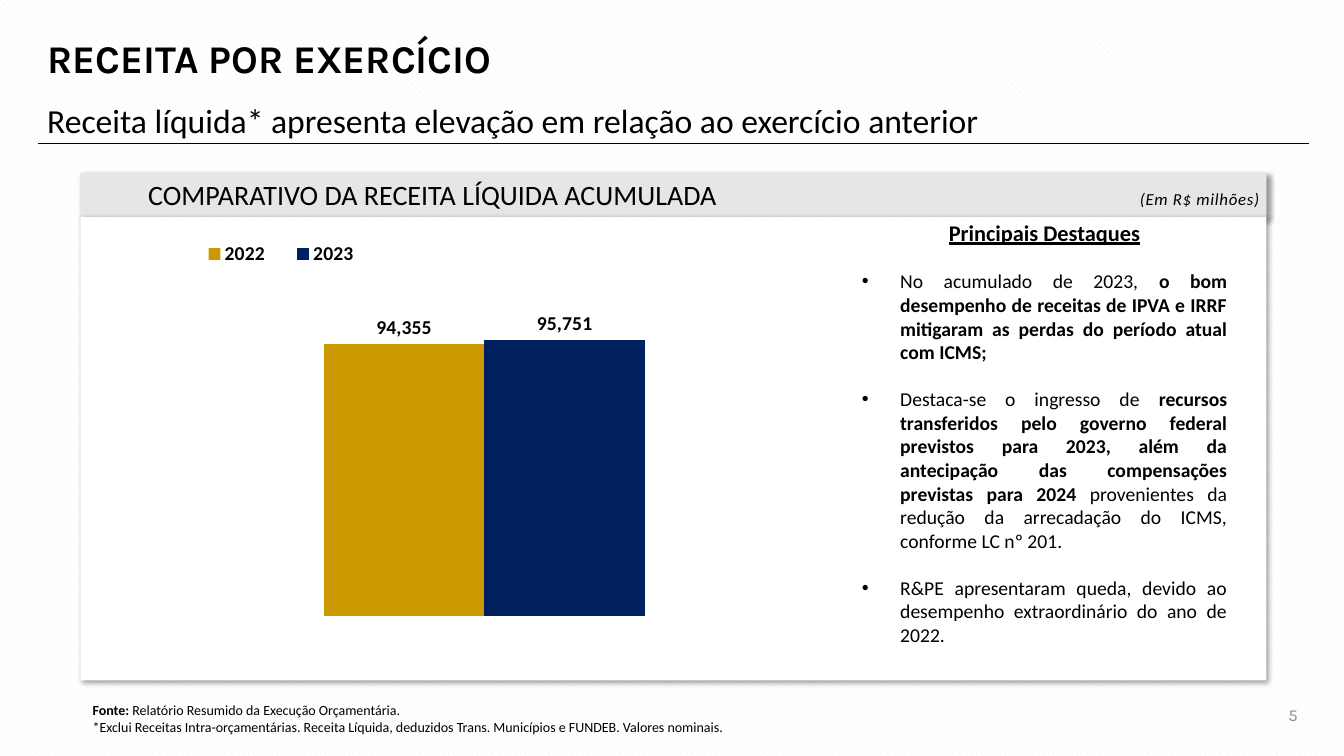
import pptx
import pptx.chart.data
import pptx.dml.color
import pptx.enum.chart
import pptx.enum.dml
import pptx.enum.shapes
import pptx.enum.text
import pptx.oxml
import pptx.oxml.ns
import pptx.util
from lxml import etree

Inches = pptx.util.Inches
Pt = pptx.util.Pt
ALIGN = pptx.enum.text.PP_ALIGN
ANCHOR = pptx.enum.text.MSO_ANCHOR
qn = pptx.oxml.ns.qn

COLORS = {
    "black": "000000",
    "white": "FFFFFF",
    "hatch": "F2F2F2",
    "header": "E7E6E6",
    "page": "8C8C8C",
    "2022": "CC9900",
    "2023": "002060",
}
REVENUE = {"2022": 94355, "2023": 95751}
HIGHLIGHTS = [
    [("No acumulado de 2023, ", False),
     ("o bom desempenho de receitas de IPVA e IRRF mitigaram as perdas "
      "do período atual com ICMS;", True)],
    [("Destaca-se o ingresso de ", False),
     ("recursos transferidos pelo governo federal previstos para 2023, além da "
      "antecipação das compensações previstas para 2024 ", True),
     ("provenientes da redução da arrecadação do ICMS, conforme LC nº 201.", False)],
    [("R&PE apresentaram queda, devido ao desempenho extraordinário "
      "do ano de 2022.", False)],
]


def rgb(name):
    return pptx.dml.color.RGBColor.from_string(COLORS[name])


def set_font(font, size, name="Calibri", color="black", bold=False):
    font.name = name
    font.size = Pt(size)
    font.bold = bold
    font.color.rgb = rgb(color)


def add_run(p, text, size, **style):
    r = p.add_run()
    r.text = text
    set_font(r.font, size, **style)
    return r


def add_text_box(s, left, top, width, height, anchor=ANCHOR.TOP):
    tf = s.shapes.add_textbox(Inches(left), Inches(top), Inches(width), Inches(height)).text_frame
    tf.word_wrap = True
    tf.vertical_anchor = anchor
    return tf


def add_panel(s, top, height, color):
    """Add a borderless rectangle with a soft shadow to the lower right."""
    sp = s.shapes.add_shape(pptx.enum.shapes.MSO_SHAPE.RECTANGLE,
                            Inches(0.8), Inches(top), Inches(11.76), Inches(height))
    sp.fill.solid()
    sp.fill.fore_color.rgb = rgb(color)
    sp.line.fill.background()
    sp.shadow.inherit = False
    effects = sp._element.spPr.find(qn("a:effectLst"))
    shadow = etree.SubElement(effects, qn("a:outerShdw"), blurRad=str(Pt(4)), dist=str(Pt(3)),
                              dir=str(45 * 60000), algn="tl", rotWithShape="0")
    tint = etree.SubElement(shadow, qn("a:srgbClr"), val=COLORS["black"])
    etree.SubElement(tint, qn("a:alpha"), val="40000")
    return sp


def add_rule(s, left, right, y):
    line = s.shapes.add_connector(pptx.enum.shapes.MSO_CONNECTOR.STRAIGHT,
                                  Inches(left), Inches(y), Inches(right), Inches(y))
    line.line.color.rgb = rgb("black")
    line.line.width = Pt(0.5)
    etree.SubElement(line._element.spPr, qn("a:effectLst"))


def place(parent, index, x, y, w, h, inner=False):
    """Give a chart part a manual layout, in fractions of the chart area."""
    for old in parent.findall(qn("c:layout")):
        parent.remove(old)
    layout = etree.Element(qn("c:layout"))
    manual = etree.SubElement(layout, qn("c:manualLayout"))
    values = {"xMode": "edge", "yMode": "edge", "x": x, "y": y, "w": w, "h": h}
    if inner:
        values = {"layoutTarget": "inner", **values}
    for tag, value in values.items():
        etree.SubElement(manual, qn("c:" + tag), val=str(value))
    parent.insert(index, layout)


def add_revenue_chart(s):
    data = pptx.chart.data.CategoryChartData(number_format="#,##0")
    data.categories = ["1"]
    for year, value in REVENUE.items():
        data.add_series(year, [value])
    chart = s.shapes.add_chart(pptx.enum.chart.XL_CHART_TYPE.COLUMN_CLUSTERED,
                               Inches(1.33), Inches(2.2), Inches(6.95), Inches(3.99), data).chart
    set_font(chart.font, 14, bold=True)
    chart.has_title = False

    chart.has_legend = True
    chart.legend.position = pptx.enum.chart.XL_LEGEND_POSITION.TOP
    chart.legend.include_in_layout = False
    set_font(chart.legend.font, 14, bold=True)
    place(chart.legend._element, 1, 0.07, 0.03, 0.28, 0.1)
    place(chart._chartSpace.chart.plotArea, 0, 0.02, 0.12, 0.96, 0.86, inner=True)

    chart.category_axis.visible = False
    axis = chart.value_axis
    axis.minimum_scale = 0
    axis.maximum_scale = 120000
    axis.has_major_gridlines = False
    axis.major_tick_mark = pptx.enum.chart.XL_TICK_MARK.NONE
    axis.tick_label_position = pptx.enum.chart.XL_TICK_LABEL_POSITION.NONE
    axis.format.line.fill.background()

    plot = chart.plots[0]
    plot.vary_by_categories = False
    plot.gap_width = 219
    plot.overlap = 0
    for series in plot.series:
        series.format.fill.solid()
        series.format.fill.fore_color.rgb = rgb(series.name)
        labels = series.data_labels
        labels.show_value = True
        labels.number_format = "#,##0"
        labels.number_format_is_linked = False
        labels.position = pptx.enum.chart.XL_LABEL_POSITION.OUTSIDE_END
        set_font(labels.font, 14, bold=True)


def add_highlights(s):
    tf = add_text_box(s, 8.45, 2.12, 3.82, 4.38)
    p = tf.paragraphs[0]
    p.alignment = ALIGN.CENTER
    add_run(p, "Principais Destaques", 16, bold=True).font.underline = True
    for runs in HIGHLIGHTS:
        p = tf.add_paragraph()
        pPr = p._p.get_or_add_pPr()
        pPr.set("marL", str(Inches(0.38)))
        pPr.set("indent", str(Inches(-0.38)))
        etree.SubElement(pPr, qn("a:buFont"), typeface="Arial")
        etree.SubElement(pPr, qn("a:buChar"), char="•")
        p.alignment = ALIGN.JUSTIFY
        p.space_before = Pt(17)
        for text, bold in runs:
            add_run(p, text, 14, bold=bold)


def add_headings(s):
    p = add_text_box(s, 0.37, 0.21, 8.89, 0.79, ANCHOR.MIDDLE).paragraphs[0]
    p.line_spacing = 0.9
    add_run(p, "RECEITA POR EXERCÍCIO", 28, name="Karla", bold=True)
    p = add_text_box(s, 0.37, 0.86, 12.6, 0.59, ANCHOR.MIDDLE).paragraphs[0]
    p.line_spacing = 1.2
    add_run(p, "Receita líquida* apresenta elevação em relação ao exercício anterior", 24)
    add_rule(s, 0.38, 12.98, 1.42)


def add_card(s):
    tf = add_panel(s, 1.71, 0.44, "header").text_frame
    tf.margin_left = Inches(0.67)
    tf.vertical_anchor = ANCHOR.TOP
    p = tf.paragraphs[0]
    p.alignment = ALIGN.LEFT
    add_run(p, "COMPARATIVO DA RECEITA LÍQUIDA ACUMULADA", 20)
    p = add_text_box(s, 11.1, 1.72, 1.49, 0.4, ANCHOR.BOTTOM).paragraphs[0]
    p.alignment = ALIGN.RIGHT
    p.line_spacing = 1.2
    r = add_run(p, "(Em R$ milhões)", 12)
    r.font.italic = True
    r._r.get_or_add_rPr().set("spc", "50")
    add_panel(s, 2.15, 4.6, "white")


def add_footer(s):
    tf = add_text_box(s, 0.82, 6.91, 7.85, 0.44)
    p = tf.paragraphs[0]
    add_run(p, "Fonte: ", 10, bold=True)
    add_run(p, "Relatório Resumido da Execução Orçamentária.", 10)
    add_run(tf.add_paragraph(), "*Exclui Receitas Intra-orçamentárias. Receita Líquida, deduzidos "
            "Trans. Municípios e FUNDEB. Valores nominais.", 10)
    p = add_text_box(s, 12.01, 6.89, 0.96, 0.4, ANCHOR.MIDDLE).paragraphs[0]
    p.alignment = ALIGN.RIGHT
    add_run(p, "5", 12, name="Karla", color="page")


def main():
    prs = pptx.Presentation()
    prs.slide_width = Inches(13.33)
    prs.slide_height = Inches(7.5)
    s = prs.slides.add_slide(prs.slide_layouts[6])
    fill = s.background.fill
    fill.patterned()
    fill.pattern = pptx.enum.dml.MSO_PATTERN.WIDE_DOWNWARD_DIAGONAL
    fill.fore_color.rgb = rgb("hatch")
    fill.back_color.rgb = rgb("white")
    add_headings(s)
    add_card(s)
    add_revenue_chart(s)
    add_highlights(s)
    add_footer(s)
    prs.save("out.pptx")


if __name__ == "__main__":
    main()
